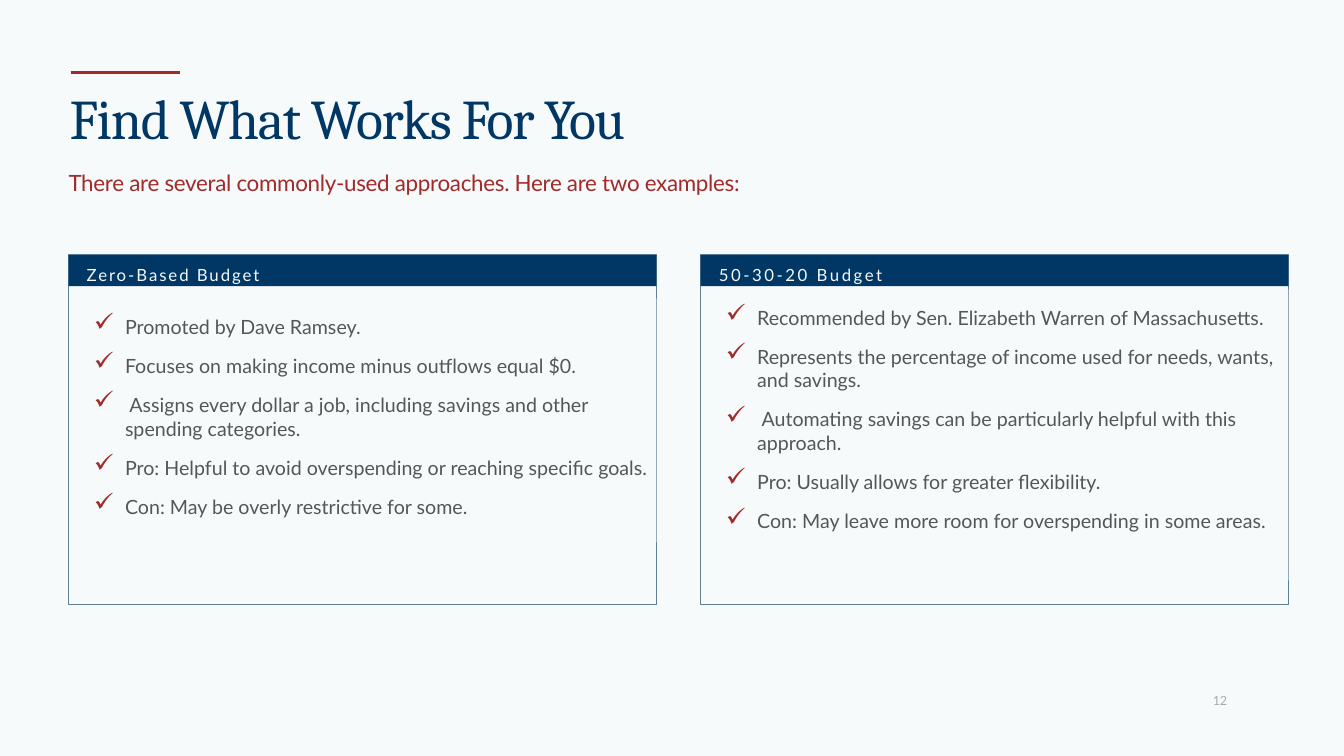
from lxml.etree import SubElement
from pptx import Presentation
from pptx.dml.color import RGBColor
from pptx.enum.shapes import MSO_CONNECTOR, MSO_SHAPE
from pptx.enum.text import MSO_ANCHOR, MSO_AUTO_SIZE, PP_ALIGN
from pptx.oxml.ns import qn
from pptx.util import Inches, Pt

TITLE = "Find What Works For You"
SUBTITLE = "There are several commonly-used approaches. Here are two examples:"
PAGE_NUMBER = "12"
# heading, letter spacing, left, list top, list height, points
BUDGETS = [
    ("Zero-Based Budget", 1.4, 0.68, 2.96, 2.42, [
        "Promoted by Dave Ramsey.",
        "Focuses on making income minus outflows equal $0.",
        " Assigns every dollar a job, including savings and other spending categories.",
        "Pro: Helpful to avoid overspending or reaching specific goals.",
        "Con: May be overly restrictive for some.",
    ]),
    ("50-30-20 Budget", 1.8, 6.95, 2.87, 2.89, [
        "Recommended by Sen. Elizabeth Warren of Massachusetts.",
        "Represents the percentage of income used for needs, wants, and savings.",
        " Automating savings can be particularly helpful with this approach.",
        "Pro: Usually allows for greater flexibility.",
        "Con: May leave more room for overspending in some areas.",
    ]),
]
NAVY, RED, PAPER, BORDER = "003764", "A12B2A", "F6FAFB", "5B7E96"
CARD_TOP, CARD_WIDTH, CARD_HEIGHT, HEADER_HEIGHT = 2.53, 5.83, 3.47, 0.31
LIST_INSET = 0.07


def color(value):
    return RGBColor.from_string(value)


def write(shape, lines, size, ink, font="Lato", spacing=0, top=0.01, indent=0.01):
    """Fill a shape with left-aligned, top-anchored paragraphs."""
    frame = shape.text_frame
    frame.word_wrap = True
    frame.auto_size = MSO_AUTO_SIZE.NONE
    frame.vertical_anchor = MSO_ANCHOR.TOP
    frame.margin_left = frame.margin_right = frame.margin_bottom = 0
    frame.margin_top = Inches(top)
    frame.text = "\n".join(lines)
    for para in frame.paragraphs:
        para.alignment = PP_ALIGN.LEFT
        para._p.get_or_add_pPr().set("marL", str(Inches(indent)))
        for span in para.runs:
            span.font.size = Pt(size)
            span.font.name = font
            span.font.color.rgb = color(ink)
            span._r.get_or_add_rPr().set("spc", str(round(spacing * 100)))


def add_check(para):
    para.space_before = Pt(11.2)
    props = para._p.get_or_add_pPr()
    props.set("indent", str(-Inches(0.31)))
    SubElement(SubElement(props, qn("a:buClr")), qn("a:srgbClr"), val=RED)
    SubElement(props, qn("a:buSzPct"), val="129000")
    SubElement(props, qn("a:buChar"), char="✓")


def add_box(page, left, top, width, height, fill=None, line=None):
    box = page.shapes.add_shape(MSO_SHAPE.RECTANGLE, Inches(left), Inches(top),
                                Inches(width), Inches(height))
    box.shadow.inherit = False
    if fill:
        box.fill.solid()
        box.fill.fore_color.rgb = color(fill)
    else:
        box.fill.background()
    if line:
        box.line.color.rgb = color(line)
        box.line.width = Pt(0.75)
    else:
        box.line.fill.background()
    return box


def add_label(page, left, top, width, height):
    return page.shapes.add_textbox(Inches(left), Inches(top), Inches(width), Inches(height))


def add_budget(page, heading, spacing, left, list_top, list_height, points):
    add_box(page, left, CARD_TOP, CARD_WIDTH, CARD_HEIGHT, line=BORDER)
    header = add_box(page, left, CARD_TOP, CARD_WIDTH, HEADER_HEIGHT, fill=NAVY)
    write(header, [heading], 12, "F6F8FA", spacing=spacing, top=0.1, indent=0.18)
    panel = add_box(page, left + LIST_INSET, list_top, CARD_WIDTH - LIST_INSET,
                    list_height, fill=PAPER)
    write(panel, points, 14, "54575A", top=0.16, indent=0.49)
    for para in panel.text_frame.paragraphs:
        add_check(para)


def main():
    deck = Presentation()
    deck.slide_width, deck.slide_height = Inches(13.33), Inches(7.5)
    page = deck.slides.add_slide(deck.slide_layouts[5])
    page.background.fill.solid()
    page.background.fill.fore_color.rgb = color(PAPER)

    accent = page.shapes.add_connector(MSO_CONNECTOR.STRAIGHT, Inches(0.7), Inches(0.72),
                                       Inches(1.79), Inches(0.72))
    accent.line.color.rgb = color(RED)
    accent.line.width = Pt(2.25)
    SubElement(accent._element.spPr, qn("a:effectLst"))

    title = page.shapes.title
    title.left, title.top = Inches(0.68), Inches(0.82)
    title.width, title.height = Inches(6.82), Inches(0.69)
    write(title, [TITLE], 40, NAVY, font="Cambria", spacing=-0.9)
    write(add_label(page, 0.67, 1.67, 7.08, 0.28), [SUBTITLE], 16, RED, spacing=-0.2)

    for budget in BUDGETS:
        add_budget(page, *budget)

    write(add_label(page, 11.99, 6.86, 0.24, 0.17), [PAGE_NUMBER], 9, "AAAAAA",
          spacing=-0.2, indent=0.04)
    deck.save("out.pptx")


if __name__ == "__main__":
    main()
